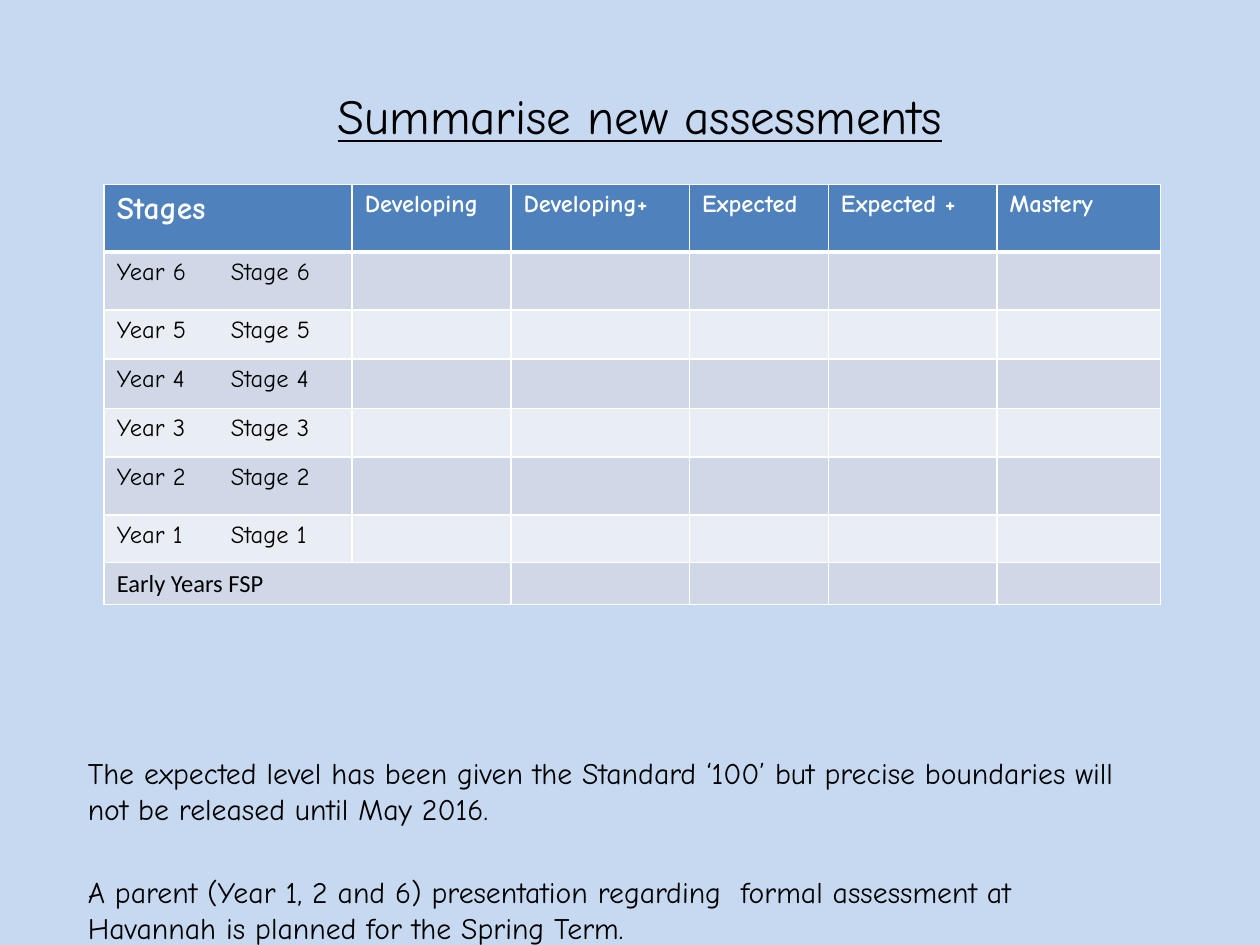
from collections import namedtuple
from dataclasses import dataclass

import pptx
import pptx.dml.color
import pptx.enum.text
import pptx.oxml
import pptx.oxml.ns
import pptx.util

Cm = pptx.util.Cm
Pt = pptx.util.Pt
Align = pptx.enum.text.PP_ALIGN
Anchor = pptx.enum.text.MSO_ANCHOR
Box = namedtuple("Box", "left top width height")


@dataclass(frozen=True)
class Theme:
    background: str = "C6D9F1"
    ink: str = "000000"
    white: str = "FFFFFF"
    header: str = "4F81BD"
    bands: tuple = ("D0D8E8", "E9EDF4")
    font: str = "Comic Neue"
    plain_font: str = "Calibri"
    title_size: int = 28
    note_size: int = 17
    stages_size: int = 18
    cell_size: int = 14


THEME = Theme()

LEVELS = ["Stages", "Developing", "Developing+", "Expected", "Expected +", "Mastery"]
STAGE_ROWS = [f"Year {year}\tStage {year}" for year in range(6, 0, -1)]
EARLY_YEARS = "Early Years FSP"
COLUMN_WIDTHS = [5, 3.2, 3.6, 2.8, 3.4, 3.3]
ROW_HEIGHTS = [1.36, 1.17, 0.99, 0.99, 0.98, 1.17, 0.96, 0.84]
NOTES = [
    "The expected level has been given the Standard ‘100’ but precise boundaries "
    "will not be released until May 2016.",
    "A parent (Year 1, 2 and 6) presentation regarding  formal assessment at "
    "Havannah is planned for the Spring Term.",
]


def rgb(colour):
    return pptx.dml.color.RGBColor.from_string(colour)


def element(markup):
    name, _, attributes_and_body = markup.partition(" ")
    namespace = pptx.oxml.ns.nsdecls("a")
    return pptx.oxml.parse_xml(f"<a:{name} {namespace} {attributes_and_body}")


def write(paragraph, text, size, font=THEME.font, colour=THEME.ink, bold=False,
          underline=False, align=Align.LEFT, before=0, tab=None):
    paragraph.alignment = align
    paragraph.space_before = Pt(before)
    if tab:
        paragraph._p.get_or_add_pPr().append(
            element(f'tabLst ><a:tab pos="{Cm(tab)}" algn="l"/></a:tabLst>'))
    run = paragraph.add_run()
    run.text = text
    run.font.name = font
    run.font.size = Pt(size)
    run.font.bold = bold
    run.font.underline = underline
    run.font.color.rgb = rgb(colour)


def add_text_frame(slide, box):
    frame = slide.shapes.add_textbox(*map(Cm, box)).text_frame
    frame.word_wrap = True
    return frame


def add_title(slide, box):
    frame = add_text_frame(slide, box)
    frame.vertical_anchor = Anchor.MIDDLE
    write(frame.paragraphs[0], "Summarise new assessments", THEME.title_size,
          underline=True, align=Align.CENTER)


def style_cell(cell, fill, bottom_width):
    cell.fill.solid()
    cell.fill.fore_color.rgb = rgb(fill)
    properties = cell._tc.get_or_add_tcPr()
    widths = {"lnL": 1, "lnR": 1, "lnT": 1, "lnB": bottom_width}
    for position, (side, width) in enumerate(widths.items()):
        properties.insert(position, element(
            f'{side} w="{Pt(width)}"><a:solidFill><a:srgbClr val="{THEME.white}"/>'
            f"</a:solidFill></a:{side}>"))


def add_assessment_table(slide, box):
    table = slide.shapes.add_table(
        len(ROW_HEIGHTS), len(COLUMN_WIDTHS), *map(Cm, box)).table
    for column, width in zip(table.columns, COLUMN_WIDTHS):
        column.width = Cm(width)
    for row, height in zip(table.rows, ROW_HEIGHTS):
        row.height = Cm(height)

    for row_index, row in enumerate(table.rows):
        is_header = row_index == 0
        fill = THEME.header if is_header else THEME.bands[(row_index - 1) % 2]
        for cell in row.cells:
            style_cell(cell, fill, bottom_width=3 if is_header else 1)
            cell.text_frame.paragraphs[0]._p.append(
                element(f'endParaRPr sz="{THEME.cell_size * 100}"/>'))

    for column_index, level in enumerate(LEVELS):
        size = THEME.cell_size if column_index else THEME.stages_size
        write(table.cell(0, column_index).text_frame.paragraphs[0], level, size,
              colour=THEME.white, bold=True)
    for row_index, stage in enumerate(STAGE_ROWS, start=1):
        write(table.cell(row_index, 0).text_frame.paragraphs[0], stage,
              THEME.cell_size, tab=2.3)

    last_row = len(ROW_HEIGHTS) - 1
    early_years = table.cell(last_row, 0)
    early_years.merge(table.cell(last_row, 1))
    write(early_years.text_frame.paragraphs[0], EARLY_YEARS, THEME.cell_size,
          font=THEME.plain_font)


def add_notes_text(slide, box):
    frame = add_text_frame(slide, box)
    for index, note in enumerate(NOTES):
        paragraph = frame.add_paragraph() if index else frame.paragraphs[0]
        write(paragraph, note, THEME.note_size, before=27 if index else 0)


def main():
    presentation = pptx.Presentation()
    presentation.slide_width = Cm(25.4)
    presentation.slide_height = Cm(19.05)
    slide = presentation.slides.add_slide(presentation.slide_layouts[6])
    slide.background.fill.solid()
    slide.background.fill.fore_color.rgb = rgb(THEME.background)

    add_title(slide, Box(2.31, 1.52, 21.18, 1.6))
    add_assessment_table(
        slide, Box(2.1, 3.72, sum(COLUMN_WIDTHS), sum(ROW_HEIGHTS)))
    add_notes_text(slide, Box(1.52, 15.1, 21.6, 3.9))
    presentation.save("out.pptx")


if __name__ == "__main__":
    main()
